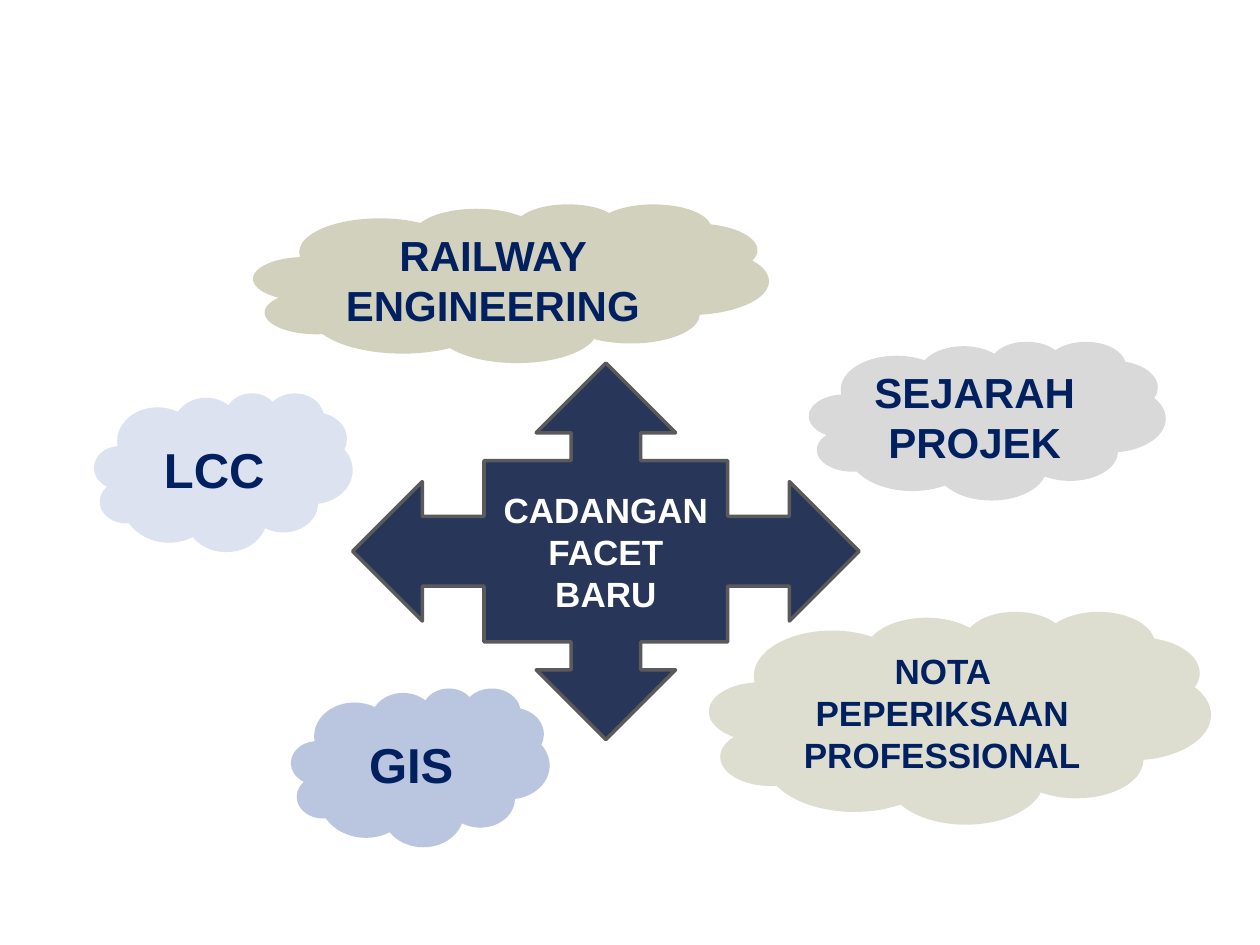
from pptx import Presentation
from pptx.dml.color import RGBColor
from pptx.enum.shapes import MSO_SHAPE
from pptx.enum.text import MSO_ANCHOR, PP_ALIGN
from pptx.util import Cm, Pt

NAVY = RGBColor(0x00, 0x20, 0x60)
WHITE = RGBColor(0xFF, 0xFF, 0xFF)
INDIGO = RGBColor(0x28, 0x36, 0x59)
GREY = RGBColor(0x5A, 0x5A, 0x5A)
PALE = RGBColor(0xDC, 0xE2, 0xEF)
KHAKI = RGBColor(0xD2, 0xD1, 0xBE)
SILVER = RGBColor(0xD9, 0xD9, 0xD9)
SAND = RGBColor(0xDE, 0xDE, 0xD0)
BLUE = RGBColor(0xBA, 0xC5, 0xDF)

# Box (left, top, width, height in cm), label, text size, fill
CLOUDS = [
    ((1.9, 7.92, 5.21, 3.2), "LCC", 28, PALE),
    ((5.11, 4.11, 10.39, 3.2), "RAILWAY ENGINEERING", 24, KHAKI),
    ((16.31, 6.88, 7.19, 3.2), "SEJARAH PROJEK", 24, SILVER),
    ((14.3, 12.32, 10.11, 4.29), "NOTA PEPERIKSAAN PROFESSIONAL", 20, SAND),
    ((5.87, 13.87, 5.21, 3.2), "GIS", 28, BLUE),
]
HUB = (7.11, 7.32, 10.21, 7.59)


def add_label(slide, kind, box, text, size, fill, color):
    """Add a filled shape without outline, with a bold centred label."""
    shape = slide.shapes.add_shape(kind, *map(Cm, box))
    shape.shadow.inherit = False
    shape.fill.solid()
    shape.fill.fore_color.rgb = fill
    shape.line.fill.background()

    frame = shape.text_frame
    frame.word_wrap = True
    frame.vertical_anchor = MSO_ANCHOR.MIDDLE
    para = frame.paragraphs[0]
    para.alignment = PP_ALIGN.CENTER
    run = para.add_run()
    run.text = text
    run.font.name = "Arial"
    run.font.size = Pt(size)
    run.font.bold = True
    run.font.color.rgb = color
    return shape


def add_cloud(slide, box, text, size, fill):
    add_label(slide, MSO_SHAPE.CLOUD, box, text, size, fill, NAVY)


def add_hub(slide, box):
    """Add the central four-way arrow that points out to the clouds."""
    hub = add_label(slide, MSO_SHAPE.QUAD_ARROW_CALLOUT, box,
                    "CADANGAN FACET BARU", 20, INDIGO, WHITE)
    hub.line.color.rgb = GREY
    hub.line.width = Pt(2)


def main():
    deck = Presentation()
    deck.slide_width = Cm(25.4)
    deck.slide_height = Cm(19.05)
    slide = deck.slides.add_slide(deck.slide_layouts[6])
    for cloud in CLOUDS:
        add_cloud(slide, *cloud)
    add_hub(slide, HUB)
    deck.save("out.pptx")


if __name__ == "__main__":
    main()
